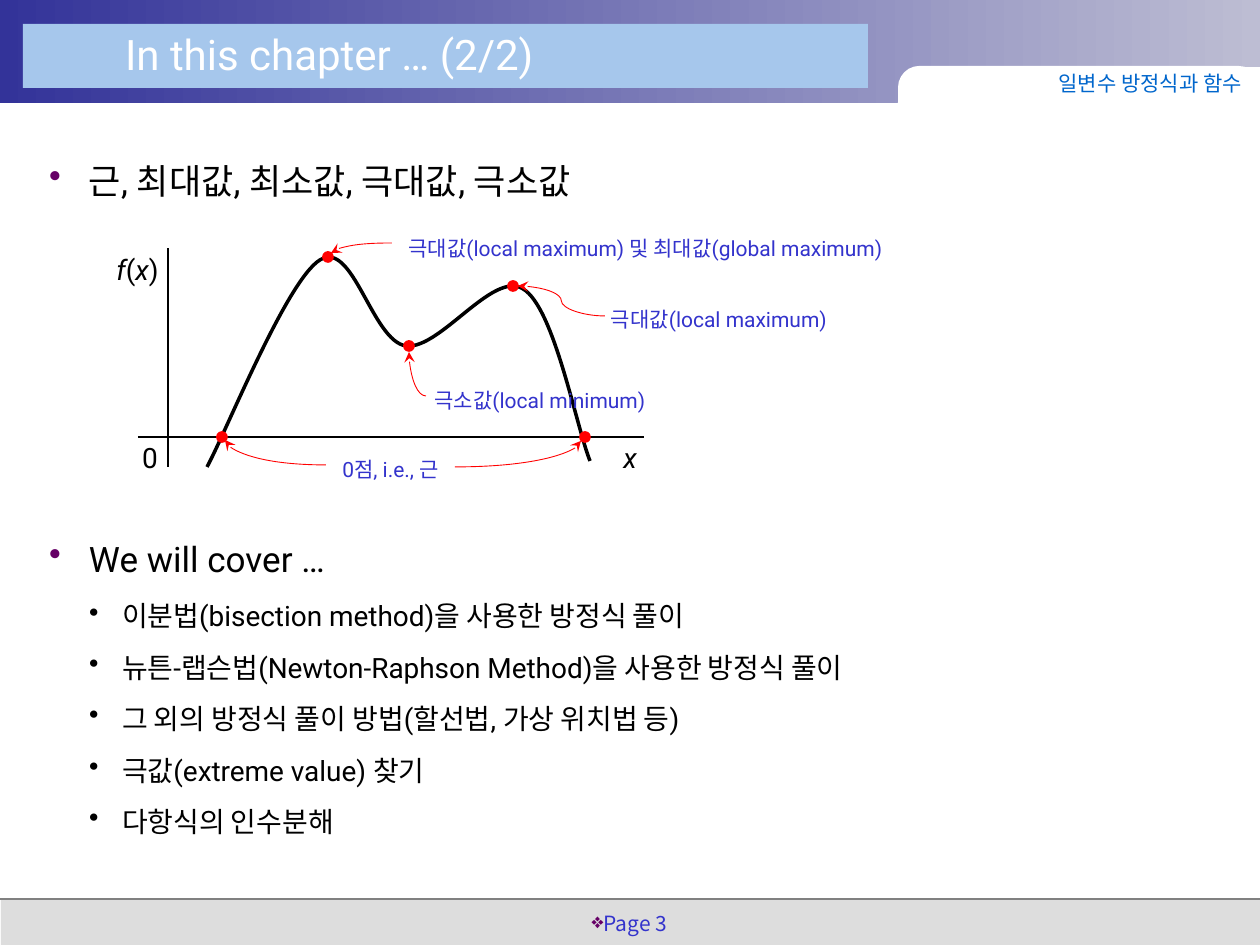
from lxml.etree import SubElement
from pptx import Presentation
from pptx.dml.color import RGBColor
from pptx.enum.shapes import MSO_CONNECTOR, MSO_SHAPE
from pptx.enum.text import MSO_ANCHOR, PP_ALIGN
from pptx.oxml.ns import qn
from pptx.util import Emu, Pt

EMU_PER_PX = 914400 / 126
LATIN_FONT = "Roboto"
KOREAN_FONT = "Noto Sans CJK KR"
WHITE = RGBColor(0xFF, 0xFF, 0xFF)
BLACK = RGBColor(0, 0, 0)
RED = RGBColor(0xFF, 0, 0)
NAVY = RGBColor(0x33, 0x33, 0x99)
LAVENDER = RGBColor(0xBD, 0xBD, 0xD3)
SKY = RGBColor(0xA6, 0xC7, 0xEC)
BLUE = RGBColor(0x33, 0x33, 0xCC)
CHAPTER_BLUE = RGBColor(0, 0x66, 0xCC)
PURPLE = RGBColor(0x66, 0, 0x66)
FOOTER_GRAY = RGBColor(0xDD, 0xDD, 0xDD)
RULE_GRAY = RGBColor(0x80, 0x80, 0x80)

TOPICS = [
    "이분법(bisection method)을 사용한 방정식 풀이",
    "뉴튼-랩슨법(Newton-Raphson Method)을 사용한 방정식 풀이",
    "그 외의 방정식 풀이 방법(할선법, 가상 위치법 등)",
    "극값(extreme value) 찾기",
    "다항식의 인수분해",
]
CURVE_POINTS = [
    (207, 467), (226, 432), (287, 280), (320, 260), (353, 239), (372, 341), (406, 346),
    (440, 350), (493, 270), (523, 289), (554, 307), (576, 426), (590, 461),
]
DOT_CENTERS = [(328, 257), (513, 286), (409, 346), (222, 437), (585, 437)]
LABELS = [
    ("극대값(local maximum) 및 최대값(global maximum)", (392, 226, 507, 35)),
    ("극대값(local maximum)", (605, 297, 228, 35)),
    ("극소값(local minimum)", (426, 378, 228, 35)),
    ("0점, i.e., 근", (326, 447, 129, 35)),
]
ARROWS = [
    ((392, 243), (331, 253), "curvedConnector2"),
    ((605, 316), (518, 286), "curvedConnector3"),
    ((426, 396), (409, 352), "curvedConnector2"),
    ((326, 465), (225, 440), "curvedConnector2"),
    ((455, 467), (581, 441), "curvedConnector2"),
]


def px(value):
    """Convert pixels to EMU."""
    return Emu(round(value * EMU_PER_PX))


def set_attributes(target, values):
    """Set every attribute named in a dict of format values."""
    for name, value in values.items():
        setattr(target, name, value)


def add_block(shapes, kind, box, color, line_color=None):
    """Add a filled preset shape."""
    shape = shapes.add_shape(kind, *map(px, box))
    shape.shadow.inherit = False
    shape.fill.solid()
    shape.fill.fore_color.rgb = color
    if line_color is None:
        shape.line.fill.background()
    else:
        shape.line.color.rgb = line_color
        shape.line.width = Pt(1)
    return shape


def add_line(shapes, start, end, color, width, kind=MSO_CONNECTOR.STRAIGHT):
    """Add a connector without shadow."""
    connector = shapes.add_connector(kind, *map(px, start + end))
    connector.line.color.rgb = color
    connector.line.width = Pt(width)
    SubElement(connector._element.spPr, qn("a:effectLst"))
    return connector


def add_arrow(shapes, start, end, preset):
    """Add a thin curved red arrow."""
    connector = add_line(shapes, start, end, RED, 0.5, MSO_CONNECTOR.CURVE)
    connector._element.spPr.find(qn("a:prstGeom")).set("prst", preset)
    SubElement(connector.line._get_or_add_ln(), qn("a:tailEnd"), type="stealth")


def add_curve(shapes, points):
    """Draw a chain of cubic curves through groups of three points."""
    builder = shapes.build_freeform(*points[0], scale=EMU_PER_PX)
    builder.add_line_segments(points[1:], close=False)
    shape = builder.convert_to_shape()
    shape.shadow.inherit = False
    shape.fill.background()
    shape.line.color.rgb = BLACK
    shape.line.width = Pt(2)
    segments = list(shape._element.iter(qn("a:lnTo")))
    for first in range(0, len(segments), 3):
        group = segments[first:first + 3]
        cubic = SubElement(group[0].getparent(), qn("a:cubicBezTo"))
        for segment in group:
            cubic.append(segment[0])
            segment.getparent().remove(segment)


def add_box(shapes, box, inset=0, anchor=MSO_ANCHOR.TOP, wrap=True):
    """Add an empty text box and return its text frame."""
    frame = shapes.add_textbox(*map(px, box)).text_frame
    sides = ("left", "right", "top", "bottom")
    set_attributes(frame, {f"margin_{side}": px(inset) for side in sides})
    set_attributes(frame, {"word_wrap": wrap, "vertical_anchor": anchor})
    return frame


def add_run(paragraph, text, size, color, font=LATIN_FONT, italic=False):
    """Add a run with Latin and Korean fonts."""
    run = paragraph.add_run()
    run.text = text
    set_attributes(run.font, {"size": Pt(size), "name": font, "italic": italic})
    run.font.color.rgb = color
    SubElement(run._r.get_or_add_rPr(), qn("a:ea"), typeface=KOREAN_FONT)


def set_bullet(paragraph, character, color, margin=0, hanging=0):
    """Give a paragraph a coloured bullet and a hanging indent."""
    properties = paragraph._p.get_or_add_pPr()
    properties.set("marL", str(px(margin)))
    properties.set("indent", str(px(-hanging)))
    bullet_color = SubElement(properties, qn("a:buClr"))
    SubElement(bullet_color, qn("a:srgbClr"), val=str(color))
    SubElement(properties, qn("a:buChar"), char=character)


def add_bullets(shapes, box, items):
    """Add a bulleted list of (text, level) items."""
    frame = add_box(shapes, box, inset=5)
    styles = [(20, PURPLE, 40, 40), (16, BLACK, 73, 33)]
    for index, (text, level) in enumerate(items):
        size, color, margin, hanging = styles[level]
        paragraph = frame.paragraphs[0] if index == 0 else frame.add_paragraph()
        set_bullet(paragraph, "•", color, margin, hanging)
        set_attributes(paragraph, {
            "level": level, "line_spacing": 1.2,
            "space_before": Pt(size * 0.2 if index else 0), "space_after": Pt(size * 0.2),
        })
        add_run(paragraph, text, size, BLACK)


def add_label(shapes, box, parts, size, color):
    """Add a centred label made of (text, italic) parts."""
    paragraph = add_box(shapes, box, anchor=MSO_ANCHOR.MIDDLE).paragraphs[0]
    set_attributes(paragraph, {"alignment": PP_ALIGN.CENTER, "line_spacing": 1.4})
    for text, italic in parts:
        add_run(paragraph, text, size, color, italic=italic)


def add_frame(shapes):
    """Draw the header, the footer and their texts."""
    add_block(shapes, MSO_SHAPE.RECTANGLE, (1, 900, 1259, 49), FOOTER_GRAY)
    header = add_block(shapes, MSO_SHAPE.RECTANGLE, (0, 0, 1260, 103), NAVY)
    header.fill.gradient()
    header.fill.gradient_angle = 0
    for stop, position, color in zip(header.fill.gradient_stops, (0, 1), (NAVY, LAVENDER)):
        stop.position = position
        stop.color.rgb = color
    add_line(shapes, (0, 899), (1260, 899), RULE_GRAY, 1)
    tab = add_block(shapes, MSO_SHAPE.ROUNDED_RECTANGLE, (898, 66, 362, 74), WHITE)
    tab.adjustments[0] = 0.29
    add_block(shapes, MSO_SHAPE.RECTANGLE, (1147, 67, 113, 30), WHITE)
    add_block(shapes, MSO_SHAPE.RECTANGLE, (23, 24, 845, 64), SKY)

    page = add_box(shapes, (573, 907, 113, 35), inset=6).paragraphs[0]
    set_bullet(page, "❖", PURPLE)
    set_attributes(page, {"alignment": PP_ALIGN.CENTER, "line_spacing": 0.9})
    add_run(page, "Page 3", 12, BLUE, KOREAN_FONT)
    title = add_box(shapes, (112, 23, 626, 63), inset=13)
    set_attributes(title, {"margin_top": px(6), "margin_bottom": px(6)})
    add_run(title.paragraphs[0], "In this chapter … (2/2)", 24, WHITE)
    chapter = add_box(shapes, (1036, 66, 211, 35), 5, MSO_ANCHOR.MIDDLE, False).paragraphs[0]
    chapter.alignment = PP_ALIGN.RIGHT
    add_run(chapter, "일변수 방정식과 함수", 12, CHAPTER_BLUE)


def add_graph(shapes):
    """Draw the function graph with its extrema and roots."""
    add_line(shapes, (138, 437), (644, 437), BLACK, 1)
    add_line(shapes, (168, 467), (168, 248), BLACK, 1)
    add_curve(shapes, CURVE_POINTS)
    add_label(shapes, (108, 239, 59, 48),
              [("f", True), ("(", False), ("x", True), (")", False)], 16, BLACK)
    add_label(shapes, (615, 427, 30, 48), [("x", True)], 16, BLACK)
    add_label(shapes, (135, 427, 30, 48), [("0", False)], 16, BLACK)
    for text, box in LABELS:
        add_label(shapes, box, [(text, False)], 12, BLUE)
    for x, y in DOT_CENTERS:
        add_block(shapes, MSO_SHAPE.OVAL, (x - 5, y - 5, 10, 10), RED, RED)
    for start, end, preset in ARROWS:
        add_arrow(shapes, start, end, preset)


def main():
    """Build and save the slide."""
    presentation = Presentation()
    set_attributes(presentation, {"slide_width": px(1260), "slide_height": px(945)})
    slide = presentation.slides.add_slide(presentation.slide_layouts[6])
    add_frame(slide.shapes)
    add_bullets(slide.shapes, (44, 146, 1181, 72), [("근, 최대값, 최소값, 극대값, 극소값", 0)])
    add_bullets(slide.shapes, (44, 524, 1181, 343),
                [("We will cover …", 0)] + [(topic, 1) for topic in TOPICS])
    add_graph(slide.shapes.add_group_shape().shapes)
    presentation.save("out.pptx")


if __name__ == "__main__":
    main()
